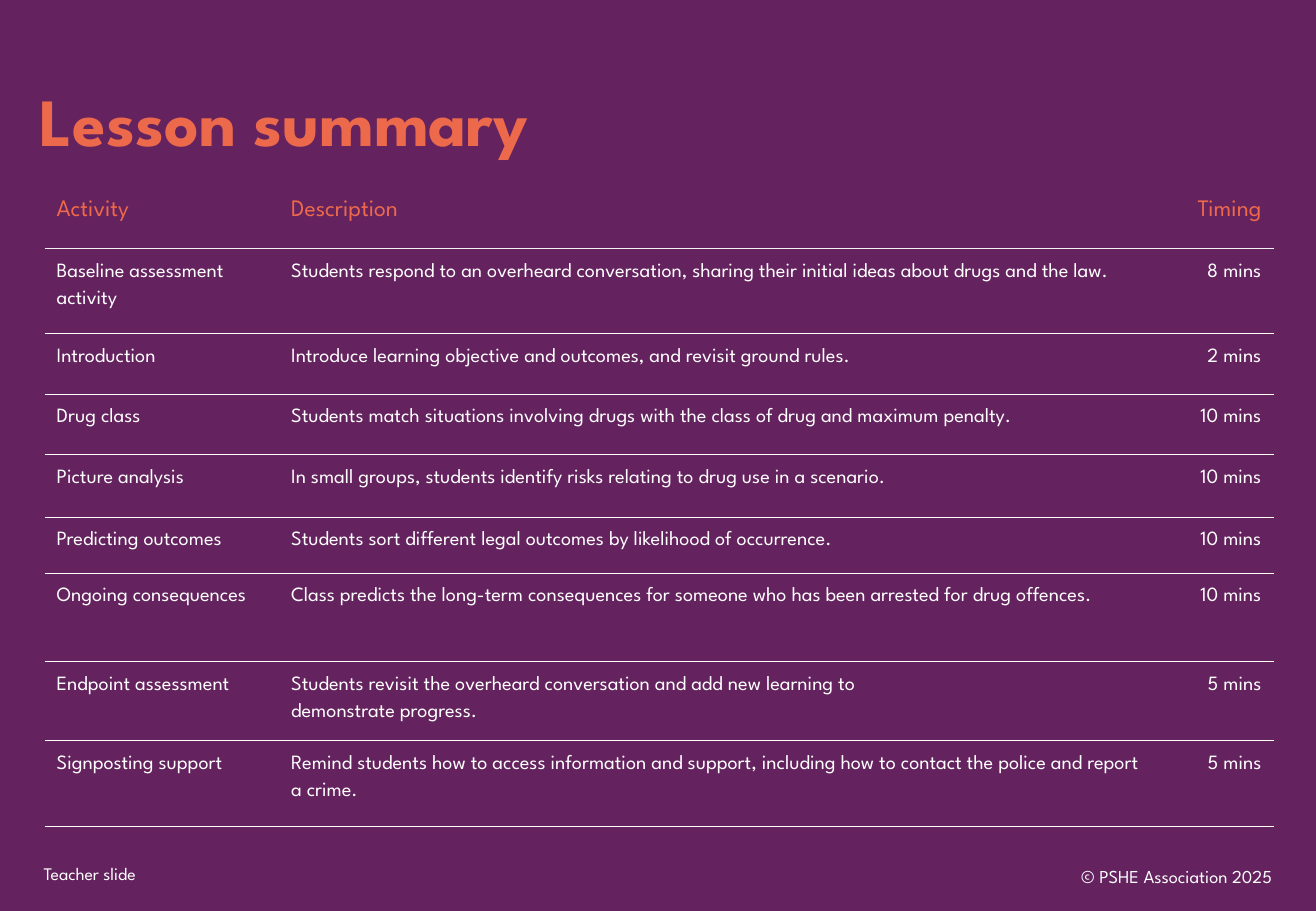
"""Build the lesson summary slide with its table of activities and timings."""
from dataclasses import dataclass

from lxml.etree import SubElement
from pptx import Presentation
from pptx.dml.color import RGBColor
from pptx.enum.text import MSO_ANCHOR as Anchor, MSO_AUTO_SIZE as AutoSize, PP_ALIGN as Align
from pptx.oxml.ns import qn
from pptx.util import Pt


@dataclass(frozen=True)
class Theme:
    font: str = "League Spartan"
    plum: str = "64235E"
    coral: str = "ED694B"
    white: str = "FFFFFF"
    header_rule: str = "F2F2F2"
    title: float = 40
    heading: float = 14
    body: float = 12
    note: float = 10.5
    copyright: float = 10.8


theme = Theme()


def write(para, text, size, color, align=Align.LEFT, bold=False):
    para.text = text
    para.alignment = align
    para.font.name = theme.font
    para.font.size = Pt(size)
    para.font.bold = bold
    para.font.color.rgb = RGBColor.from_string(color)


def add_border(cell, side, color=None):
    line = SubElement(cell._tc.get_or_add_tcPr(), qn(f"a:ln{side}"), w=str(Pt(0.5)))
    if color:
        SubElement(SubElement(line, qn("a:solidFill")), qn("a:srgbClr"), val=color)
    else:
        SubElement(line, qn("a:noFill"))


deck = Presentation()
deck.slide_width, deck.slide_height = Pt(780), Pt(540)
page = deck.slides.add_slide(deck.slide_layouts[5])
page.background.fill.solid()
page.background.fill.fore_color.rgb = RGBColor.from_string(theme.plum)

title = page.shapes.title
title.left, title.top, title.width, title.height = Pt(16.5), Pt(46.8), Pt(590.4), Pt(54.7)
title.text_frame.vertical_anchor = Anchor.MIDDLE
title.text_frame.auto_size = AutoSize.NONE
heading = title.text_frame.paragraphs[0]
write(heading, "Lesson summary", theme.title, theme.coral, bold=True)
heading.line_spacing = 0.9

footers = [
    ("Teacher slide", (18.7, 507.6, 488.2, 20.9), theme.note, Align.LEFT, Anchor.TOP),
    ("© PSHE Association 2025", (585.4, 504.7, 175.7, 28.8), theme.copyright, Align.RIGHT, Anchor.MIDDLE),
]
for text, place, size, align, anchor in footers:
    box = page.shapes.add_textbox(*map(Pt, place))
    box.text_frame.word_wrap = True
    box.text_frame.vertical_anchor = anchor
    write(box.text_frame.paragraphs[0], text, size, theme.white, align)

activities = [
    ("Activity", "Description", "Timing"),
    ("Baseline assessment activity",
     "Students respond to an overheard conversation, sharing their initial ideas about drugs and the law.",
     "8 mins"),
    ("Introduction", "Introduce learning objective and outcomes, and revisit ground rules.", "2 mins"),
    ("Drug class",
     "Students match situations involving drugs with the class of drug and maximum penalty.", "10 mins"),
    ("Picture analysis",
     "In small groups, students identify risks relating to drug use in a scenario.", "10 mins"),
    ("Predicting outcomes", "Students sort different legal outcomes by likelihood of occurrence.", "10 mins"),
    ("Ongoing consequences",
     "Class predicts the long-term consequences for someone who has been arrested for drug offences.",
     "10 mins"),
    ("Endpoint assessment",
     "Students revisit the overheard conversation and add new learning to \ndemonstrate progress.",
     "5 mins"),
    ("Signposting support",
     "Remind students how to access information and support, including how to contact the police "
     "and report a crime.", "5 mins"),
]
column_widths = [139, 521.5, 68]
row_heights = [35.6, 50.4, 35.8, 36.1, 37, 33, 52.7, 46.8, 51]

frame = page.shapes.add_table(len(activities), len(column_widths), Pt(26.4), Pt(111.8),
                              Pt(sum(column_widths)), Pt(sum(row_heights)))
table = frame.table
table.first_row = table.horz_banding = False
for column, width in zip(table.columns, column_widths):
    column.width = Pt(width)

rule_above = None
for index, (row, height, texts) in enumerate(zip(table.rows, row_heights, activities)):
    row.height = Pt(height)
    is_header = index == 0
    size, color = (theme.heading, theme.coral) if is_header else (theme.body, theme.white)
    rule_below = theme.header_rule if is_header else theme.white
    for cell, text, align in zip(row.cells, texts, (Align.LEFT, Align.LEFT, Align.RIGHT)):
        para = cell.text_frame.paragraphs[0]
        write(para, text, size, color, align)
        para.line_spacing = Pt(16)
        for side, rule in (("L", None), ("R", None), ("T", rule_above), ("B", rule_below)):
            add_border(cell, side, rule)
        cell.fill.background()
    rule_above = rule_below

deck.save("out.pptx")
